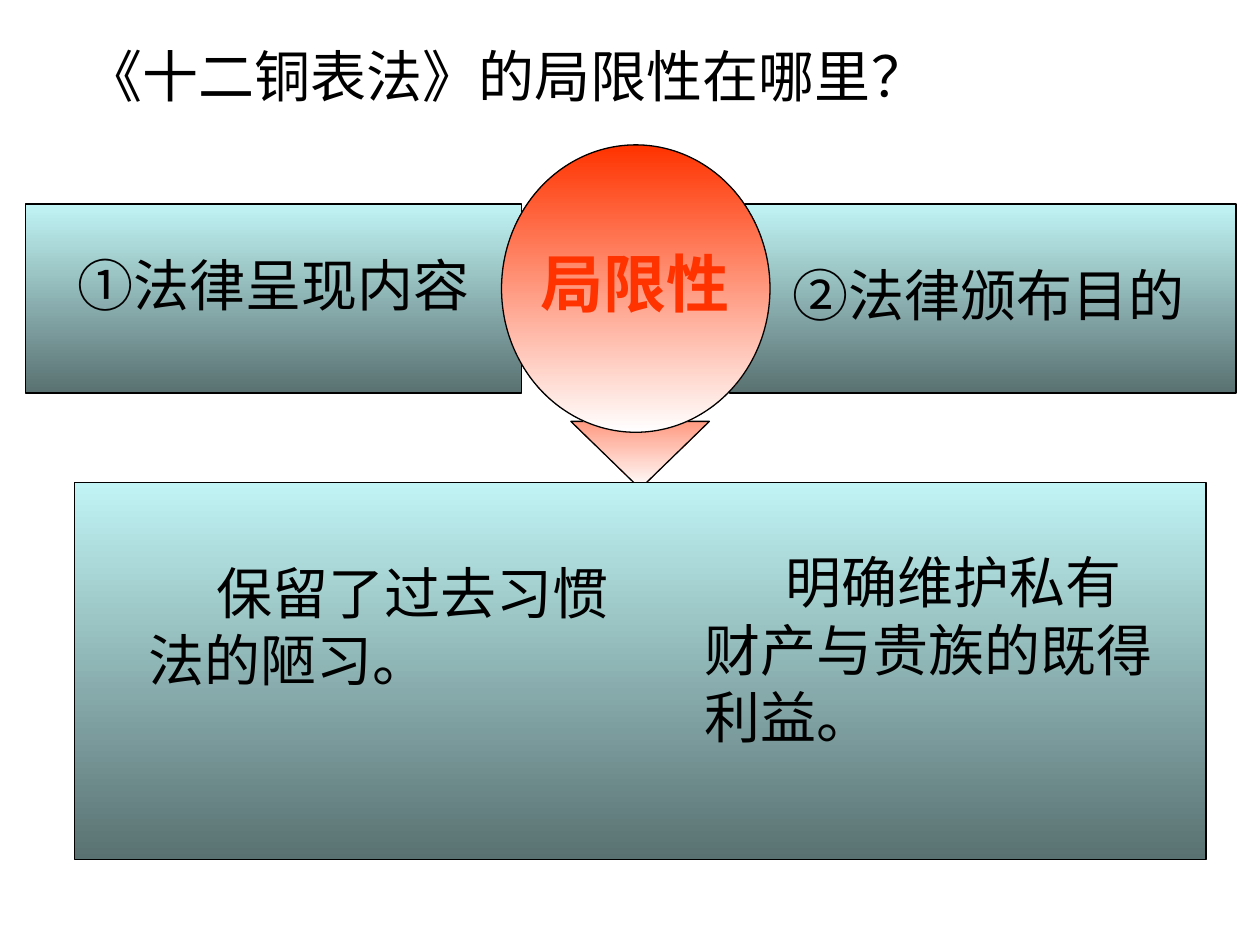
from dataclasses import dataclass

from pptx import Presentation
from pptx.dml.color import RGBColor
from pptx.enum.shapes import MSO_SHAPE as Shape
from pptx.enum.text import MSO_ANCHOR as Anchor, PP_ALIGN as Align
from pptx.oxml.ns import qn
from pptx.util import Pt
from lxml.etree import SubElement


@dataclass(frozen=True)
class Theme:
    black: str = "000000"
    red: str = "FF3300"
    warm: tuple = ("FF3300", "FFFFFF")
    cool: tuple = ("C1F4F5", "597171")
    body_font: str = "Arial"
    badge_font: str = "Noto Sans CJK SC"
    body_size: float = 32
    badge_size: float = 36
    line_width: float = 0.75
    hanging: float = -18
    margin: float = 126


THEME = Theme()


def set_all(target, values):
    for name, value in values.items():
        setattr(target, name, value)


def add_panel(page, kind, box, colours):
    panel = page.shapes.add_shape(kind, *map(Pt, box))
    panel.shadow.inherit = False
    panel.fill.gradient()
    panel.fill.gradient_angle = 270
    for stop, colour in zip(panel.fill.gradient_stops, colours):
        stop.color.rgb = RGBColor.from_string(colour)
    panel.line.width = Pt(THEME.line_width)
    panel.line.color.rgb = RGBColor.from_string(THEME.black)


def add_text(page, box, words, font, size, colour, bold=False):
    frame = page.shapes.add_textbox(*map(Pt, box)).text_frame
    set_all(frame, {"word_wrap": True, "vertical_anchor": Anchor.TOP})
    para = frame.paragraphs[0]
    span = para.add_run()
    span.text = words
    set_all(span.font, {"name": font, "size": Pt(size), "bold": bold})
    span.font.color.rgb = RGBColor.from_string(colour)
    return frame, para, span


def add_statement(page, box, words, indent=THEME.hanging):
    frame, para, span = add_text(page, box, words, THEME.body_font,
                                 THEME.body_size, THEME.black)
    properties = para._p.get_or_add_pPr()
    properties.set("marL", str(Pt(THEME.margin)))
    properties.set("indent", str(Pt(indent)))


def add_badge(page, box, words):
    left, top, width, height = box
    add_panel(page, Shape.OVAL, box, THEME.warm)
    label = (left + 22.3, top + 56.9, 108, 48.2)
    frame, para, span = add_text(page, label, words, THEME.badge_font,
                                 THEME.badge_size, THEME.red, True)
    set_all(frame, {"word_wrap": False, "margin_left": 0, "margin_right": 0,
                    "margin_top": 0, "margin_bottom": 0})
    para.alignment = Align.CENTER
    east = SubElement(span.font._element, qn("a:ea"))
    east.set("typeface", THEME.badge_font)


def add_causes(page, box):
    left, top, width, height = box
    add_panel(page, Shape.RECTANGLE, (left, top, 283.7, height), THEME.cool)
    add_panel(page, Shape.RECTANGLE,
              (left + width - 289.4, top, 289.4, height), THEME.cool)
    add_statement(page, (left - 85, top + 23, 351.4, 45.4), "①法律呈现内容")
    add_statement(page, (left + 323.3, top + 28.8, 385.2, 45.4), "②法律颁布目的")


def add_findings(page, box):
    left, top, width, height = box
    add_panel(page, Shape.RECTANGLE, box, THEME.cool)
    add_statement(page, (left - 90.7, top + 39.6, 414, 84.2),
                  "保留了过去习惯法的陋习。", 39)
    add_statement(page, (left + 226.8, top + 33.8, 396.7, 122.4),
                  "明确维护私有财产与贵族的既得利益。", 46.5)


def main():
    deck = Presentation()
    set_all(deck, {"slide_width": Pt(720), "slide_height": Pt(540)})
    page = deck.slides.add_slide(deck.slide_layouts[6])
    add_panel(page, Shape.DOWN_ARROW, (326.2, 202.3, 79.2, 77), THEME.warm)
    add_statement(page, (-65.5, 20.2, 785.5, 46), "《十二铜表法》的局限性在哪里？")
    add_causes(page, (14.4, 116.6, 691.9, 108))
    add_findings(page, (42.5, 275.8, 646.6, 215.3))
    add_badge(page, (286.6, 82.8, 153.4, 164.2), "局限性")
    deck.save("out.pptx")


if __name__ == "__main__":
    main()
